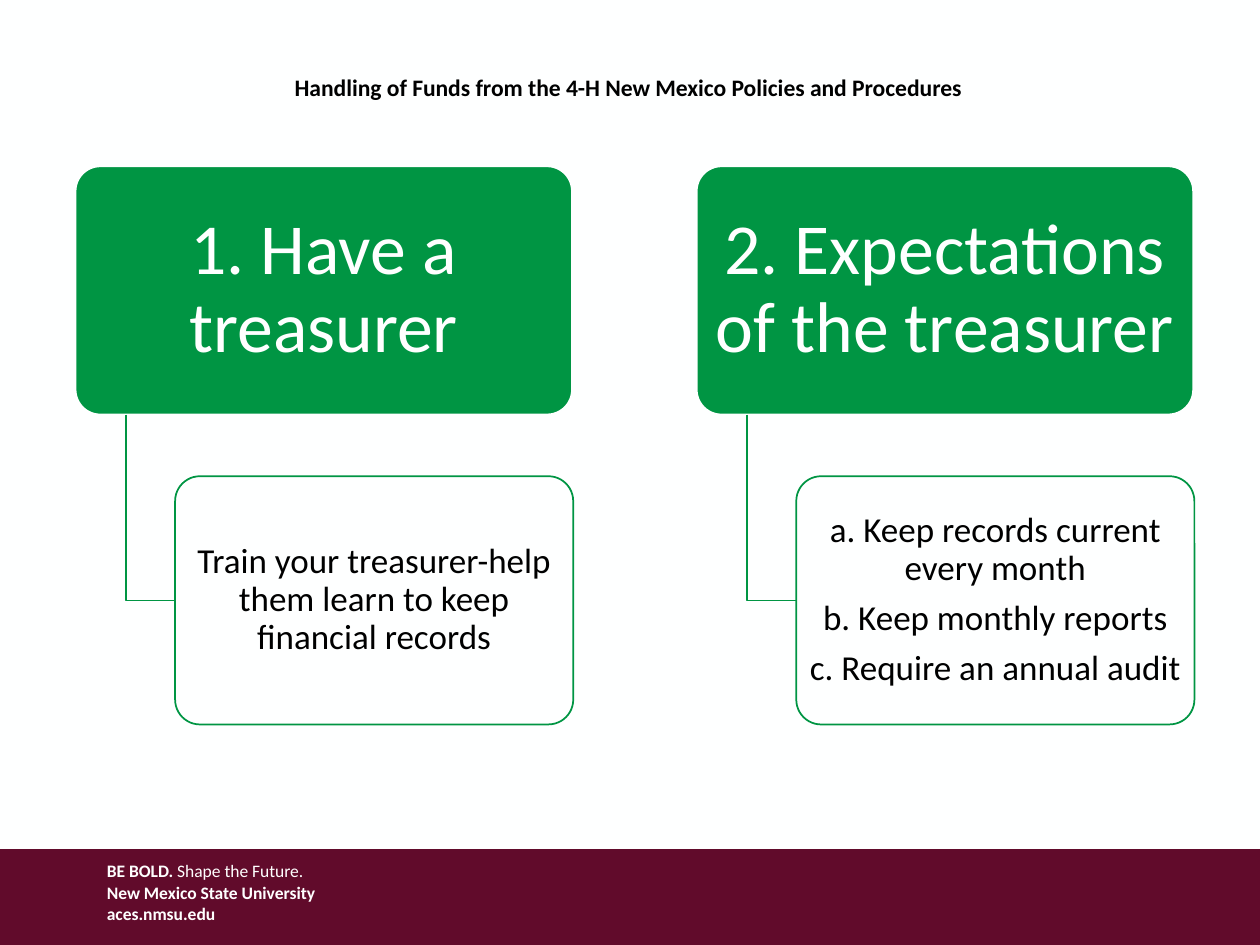
from pptx import Presentation
from pptx.dml.color import RGBColor
from pptx.enum.shapes import MSO_SHAPE
from pptx.enum.text import MSO_ANCHOR, PP_ALIGN
from pptx.util import Inches, Pt

RECT, ROUND = MSO_SHAPE.RECTANGLE, MSO_SHAPE.ROUNDED_RECTANGLE
MIDDLE, CENTER = MSO_ANCHOR.MIDDLE, PP_ALIGN.CENTER

TITLE = "Handling of Funds from the 4-H New Mexico Policies and Procedures"
TOPICS = [
    ("1. Have a treasurer",
     ["Train your treasurer-help them learn to keep financial records"]),
    ("2. Expectations of the treasurer",
     ["a. Keep records current every month",
      "b. Keep monthly reports",
      "c. Require an annual audit"]),
]
# Each footer line is a list of (text, bold) runs.
FOOTER = [
    [("BE BOLD. ", True), ("Shape the Future.", False)],
    [("New Mexico State University", True)],
    [("aces.nmsu.edu", True)],
]


class Theme:
    font = "Calibri"
    paper = RGBColor(0xFE, 0xFF, 0xFF)
    white = RGBColor(0xFF, 0xFF, 0xFF)
    black = RGBColor(0, 0, 0)
    green = RGBColor(0x00, 0x95, 0x43)
    maroon = RGBColor(0x61, 0x0B, 0x2B)
    title, head, body, foot = 13.5, 41, 20, 10


# Topic columns, in inches
LEFT, STEP = 0.6, 4.93
HEAD_TOP, HEAD_W, CARD_H = 1.32, 3.94, 1.97
BODY_TOP, BODY_W = 3.78, 3.16
STEM, INDENT = 0.4, 0.79


def style(font, size, color, bold=False):
    font.name, font.size, font.bold = Theme.font, Pt(size), bold
    font.color.rgb = color


def add_box(slide, kind, area, fill, line=None):
    box = slide.shapes.add_shape(kind, *map(Inches, area))
    box.shadow.inherit = False
    box.fill.solid()
    box.fill.fore_color.rgb = fill
    if line is None:
        box.line.fill.background()
    else:
        box.line.color.rgb = line
        box.line.width = Pt(1)
    return box


def add_card(slide, area, lines, size, color, fill, line, pad, gap):
    """Add a rounded box with centred paragraphs; pad is (side, top) inches."""
    card = add_box(slide, ROUND, area, fill, line)
    card.adjustments[0] = 0.1
    frame = card.text_frame
    frame.word_wrap = True
    frame.vertical_anchor = MIDDLE
    frame.margin_left = frame.margin_right = Inches(pad[0])
    frame.margin_top = frame.margin_bottom = Inches(pad[1])
    frame.text = "\n".join(lines)
    for para in frame.paragraphs:
        para.alignment = CENTER
        para.line_spacing = 0.9
        para.space_after = Pt(gap)
        style(para.font, size, color)


def add_elbow(slide, x, top, right, bottom):
    x, top, right, bottom = map(Inches, (x, top, right, bottom))
    pen = slide.shapes.build_freeform(x, top)
    pen.add_line_segments([(x, bottom), (right, bottom)], close=False)
    elbow = pen.convert_to_shape()
    elbow.shadow.inherit = False
    elbow.fill.background()
    elbow.line.color.rgb = Theme.green
    elbow.line.width = Pt(1)


def add_topic(slide, left, head, lines):
    inner = left + INDENT
    add_card(slide, (left, HEAD_TOP, HEAD_W, CARD_H), [head], Theme.head,
             Theme.paper, Theme.green, Theme.paper, (0.09, 0.06), 14)
    add_elbow(slide, left + STEM, HEAD_TOP + CARD_H, inner,
              BODY_TOP + CARD_H / 2)
    add_card(slide, (inner, BODY_TOP, BODY_W, CARD_H), lines, Theme.body,
             Theme.black, Theme.paper, Theme.green, (0.04, 0.03), 7)


def add_title(slide):
    box = slide.shapes.add_textbox(*map(Inches, (2.24, 0.53, 5.6, 0.33)))
    frame = box.text_frame
    frame.word_wrap = False
    frame.text = TITLE
    style(frame.paragraphs[0].font, Theme.title, Theme.black, True)


def add_footer(slide):
    add_box(slide, RECT, (0, 6.74, 10, 0.76), Theme.maroon)
    box = slide.shapes.add_textbox(*map(Inches, (0.75, 6.78, 2.88, 0.82)))
    frame = box.text_frame
    frame.word_wrap = True
    for i, runs in enumerate(FOOTER):
        para = frame.add_paragraph() if i else frame.paragraphs[0]
        for text, bold in runs:
            run = para.add_run()
            run.text = text
            style(run.font, Theme.foot, Theme.white, bold)


def main():
    deck = Presentation()
    deck.slide_width, deck.slide_height = Inches(10), Inches(7.5)
    slide = deck.slides.add_slide(deck.slide_layouts[6])
    slide.background.fill.solid()
    slide.background.fill.fore_color.rgb = Theme.paper
    add_footer(slide)
    add_title(slide)
    for i, (head, lines) in enumerate(TOPICS):
        add_topic(slide, LEFT + i * STEP, head, lines)
    deck.save("out.pptx")


if __name__ == "__main__":
    main()
